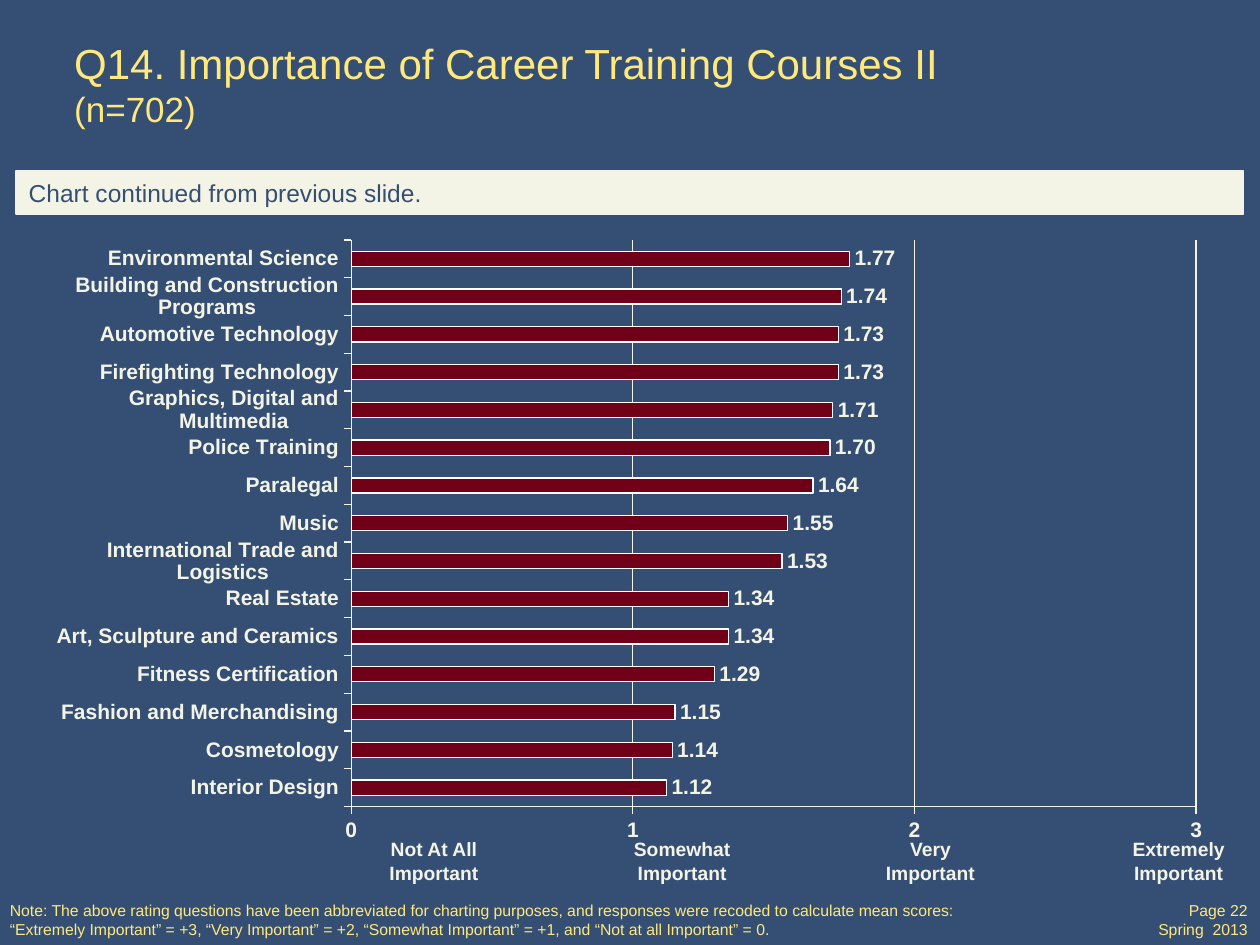
from lxml.etree import SubElement
from pptx import Presentation
from pptx.chart.data import CategoryChartData
from pptx.dml.color import RGBColor
from pptx.enum.chart import XL_CHART_TYPE as ChartType
from pptx.enum.chart import XL_LABEL_POSITION as LabelPosition
from pptx.enum.chart import XL_TICK_LABEL_POSITION as TickLabelPosition
from pptx.enum.chart import XL_TICK_MARK as TickMark
from pptx.enum.shapes import MSO_SHAPE as Shape
from pptx.enum.text import MSO_ANCHOR as Anchor
from pptx.enum.text import PP_ALIGN as Align
from pptx.oxml.ns import qn
from pptx.util import Inches, Pt

NAVY = RGBColor(0x35, 0x4F, 0x74)
YELLOW = RGBColor(0xFF, 0xE8, 0x7C)
CREAM = RGBColor(0xF4, 0xF4, 0xE6)
MAROON = RGBColor(0x70, 0x00, 0x17)
WHITE = RGBColor(0xFF, 0xFF, 0xFF)
FONT = "Arial"

COURSES = [
    ("Interior Design", 1.12),
    ("Cosmetology", 1.14),
    ("Fashion and Merchandising", 1.15),
    ("Fitness Certification", 1.29),
    ("Art, Sculpture and Ceramics", 1.34),
    ("Real Estate", 1.34),
    ("International Trade and Logistics", 1.53),
    ("Music", 1.55),
    ("Paralegal", 1.64),
    ("Police Training", 1.70),
    ("Graphics, Digital and Multimedia", 1.71),
    ("Firefighting Technology", 1.73),
    ("Automotive Technology", 1.73),
    ("Building and Construction Programs", 1.74),
    ("Environmental Science", 1.77),
]
RATINGS = ["Not At All", "Somewhat", "Very", "Extremely"]
NOTE = [
    "Note: The above rating questions have been abbreviated for charting purposes, "
    "and responses were recoded to calculate mean scores:",
    "“Extremely Important” = +3, “Very Important” = +2, "
    "“Somewhat Important” = +1, and “Not at all Important” = 0.",
]


def style_font(font, size, color, bold=False):
    font.name = FONT
    font.size = Pt(size)
    font.bold = bold
    font.color.rgb = color


def write_lines(frame, lines, size, color, align=Align.LEFT, bold=False):
    for index, line in enumerate(lines):
        paragraph = frame.add_paragraph() if index else frame.paragraphs[0]
        paragraph.text = line
        paragraph.alignment = align
        style_font(paragraph.font, size, color, bold)


def add_text(slide, box, lines, size, color, align=Align.LEFT, bold=False, wrap=True):
    frame = slide.shapes.add_textbox(*map(Inches, box)).text_frame
    frame.word_wrap = wrap
    write_lines(frame, lines, size, color, align, bold)
    return frame


def add_title(slide):
    frame = add_text(slide, (0.49, 0.33, 7.25, 0.67),
                     ["Q14. Importance of Career Training Courses II\n"], 24, YELLOW)
    frame.vertical_anchor = Anchor.MIDDLE
    count = frame.paragraphs[0].add_run()
    count.text = "(n=702)"
    count.font.size = Pt(20)


def add_banner(slide):
    shape = slide.shapes.add_shape(Shape.RECTANGLE, *map(Inches, (0.13, 1.36, 9.74, 0.34)))
    shape.shadow.inherit = False
    shape.fill.solid()
    shape.fill.fore_color.rgb = CREAM
    shape.line.color.rgb = CREAM
    shape.line.width = Pt(1)
    write_lines(shape.text_frame, ["Chart continued from previous slide."], 14, NAVY)


def style_axis(axis):
    style_font(axis.tick_labels.font, 12, CREAM, True)
    axis.major_tick_mark = TickMark.OUTSIDE
    axis.minor_tick_mark = TickMark.NONE
    axis.format.line.color.rgb = CREAM


def set_plot_area(chart, x, y, w, h):
    plot_area = chart._chartSpace.chart.plotArea
    layout = plot_area.find(qn("c:layout"))
    if layout is None:
        layout = SubElement(plot_area, qn("c:layout"))
        plot_area.insert(0, layout)
    manual = SubElement(layout, qn("c:manualLayout"))
    settings = {"layoutTarget": "inner", "xMode": "edge", "yMode": "edge",
                "x": x, "y": y, "w": w, "h": h}
    for name, value in settings.items():
        SubElement(manual, qn(f"c:{name}")).set("val", str(value))


def add_course_chart(slide):
    data = CategoryChartData(number_format="0.00")
    data.categories = [course for course, _ in COURSES]
    data.add_series("Series 1", [score for _, score in COURSES])
    chart = slide.shapes.add_chart(
        ChartType.BAR_CLUSTERED, *map(Inches, (0.26, 1.81, 9.47, 4.97)), data).chart
    chart.has_legend = False
    chart.has_title = False
    style_font(chart.font, 18, CREAM)
    set_plot_area(chart, 0.267, 0.019, 0.708, 0.905)

    style_axis(chart.category_axis)
    chart.category_axis.tick_label_position = TickLabelPosition.LOW
    value_axis = chart.value_axis
    style_axis(value_axis)
    value_axis.minimum_scale = 0
    value_axis.maximum_scale = 3
    value_axis.major_unit = 1
    value_axis.major_gridlines.format.line.color.rgb = CREAM
    value_axis.tick_labels.number_format = "#,##0"
    value_axis.tick_labels.number_format_is_linked = False

    plot = chart.plots[0]
    plot.gap_width = 150
    plot.vary_by_categories = False
    bars = plot.series[0].format
    bars.fill.solid()
    bars.fill.fore_color.rgb = MAROON
    bars.line.color.rgb = WHITE
    bars.line.width = Pt(0.75)
    plot.has_data_labels = True
    labels = plot.data_labels
    labels.show_value = True
    labels.position = LabelPosition.OUTSIDE_END
    labels.number_format = "####.00"
    labels.number_format_is_linked = False
    style_font(labels.font, 12, CREAM, True)


def add_rating_labels(slide):
    for index, rating in enumerate(RATINGS):
        add_text(slide, (2.76 + 1.97 * index, 6.6, 1.37, 0.47),
                 [f"{rating}\nImportant"], 11, CREAM, Align.CENTER, True)


def main():
    presentation = Presentation()
    presentation.slide_width = Inches(10)
    presentation.slide_height = Inches(7.5)
    slide = presentation.slides.add_slide(presentation.slide_layouts[6])
    slide.background.fill.solid()
    slide.background.fill.fore_color.rgb = NAVY

    add_text(slide, (9.08, 7.1, 0.92, 0.4), ["Page 22", "Spring  2013"],
             9, YELLOW, Align.RIGHT, wrap=False)
    add_title(slide)
    add_text(slide, (-0.02, 7.1, 9.05, 0.4), NOTE, 9, YELLOW)
    add_course_chart(slide)
    add_banner(slide)
    add_rating_labels(slide)
    presentation.save("out.pptx")


if __name__ == "__main__":
    main()
